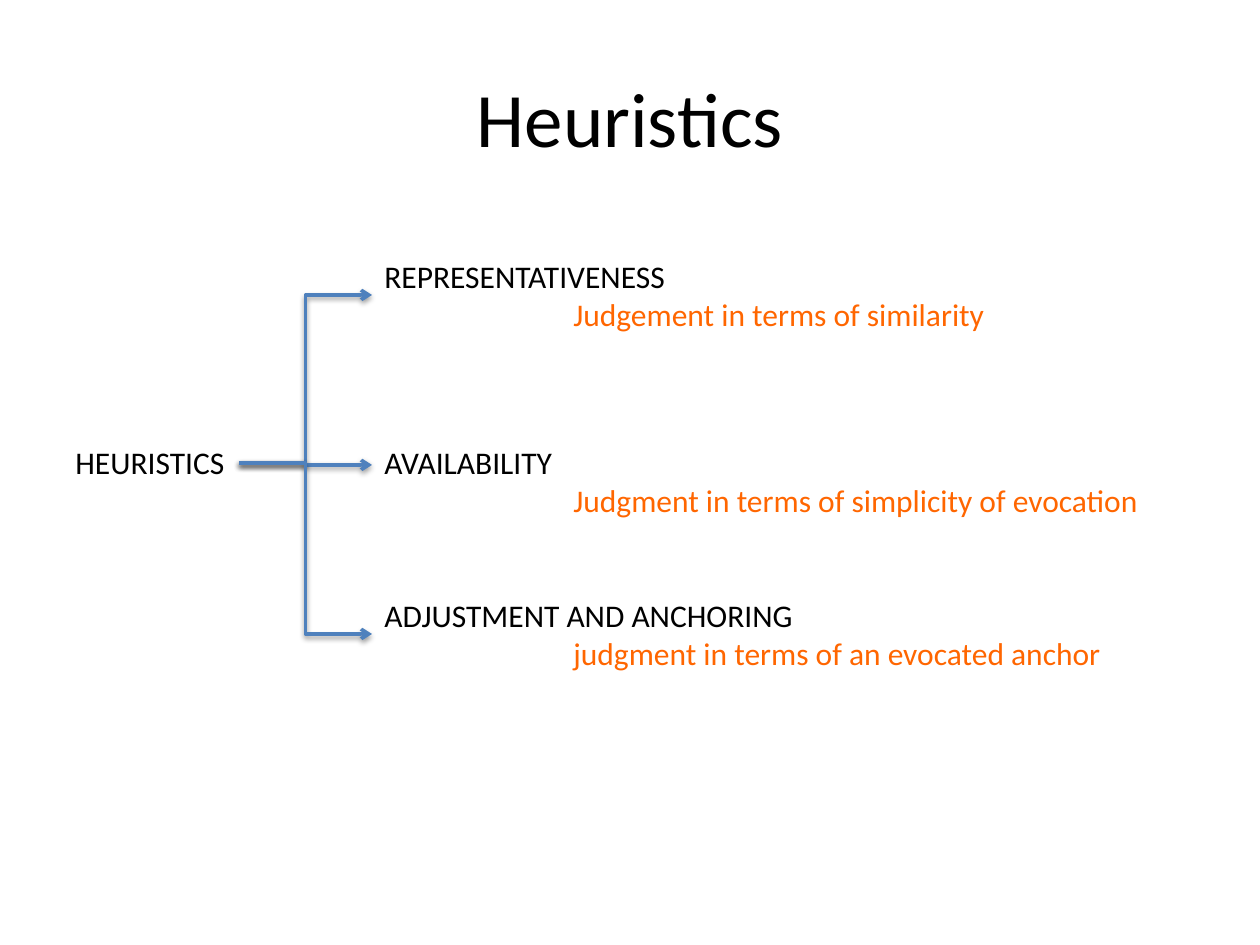
from lxml.etree import SubElement
from pptx import Presentation
from pptx.dml.color import RGBColor
from pptx.enum.shapes import MSO_CONNECTOR as Connector
from pptx.enum.text import MSO_ANCHOR as Anchor, MSO_AUTO_SIZE as AutoSize, PP_ALIGN as Align
from pptx.oxml.ns import qn
from pptx.util import Emu, Pt

BLACK = RGBColor(0x00, 0x00, 0x00)
ORANGE = RGBColor(0xFF, 0x66, 0x00)
BLUE = RGBColor(0x4F, 0x81, 0xBD)
BRANCHES = [
    ("REPRESENTATIVENESS", "Judgement in terms of similarity", 251, 633, 295),
    ("AVAILABILITY", "Judgment in terms of simplicity of evocation", 437, 788, 465),
    ("ADJUSTMENT AND ANCHORING", "judgment in terms of an evocated anchor", 590, 751, 634),
]


def px(length):
    return Emu(round(length * 914400 / 126))


def write(para, text, size=18, color=BLACK, font="Calibri", align=Align.LEFT, indent=0):
    para.alignment = align
    if indent:
        para.level = 3
        properties = para._p.get_or_add_pPr()
        properties.set("marL", str(px(indent)))
        properties.set("indent", "0")
    span = para.add_run()
    span.text = text
    span.font.size = Pt(size)
    span.font.name = font
    span.font.color.rgb = color


class Diagram:
    """Draws titles, labels and shadowed elbow arrows on one slide."""

    def __init__(self, page):
        self.page = page
        self.line_color = BLUE
        self.line_width = Pt(2)

    def frame(self, left, top, width, height):
        return self.page.shapes.add_textbox(*map(px, (left, top, width, height))).text_frame

    def title(self, text, left, top, width, height):
        frame = self.frame(left, top, width, height)
        frame.word_wrap = True
        frame.vertical_anchor = Anchor.MIDDLE
        write(frame.paragraphs[0], text, size=44, align=Align.CENTER)

    def label(self, text, left, top, width, height, detail=None):
        frame = self.frame(left, top, width, height)
        frame.word_wrap = False
        frame.auto_size = AutoSize.SHAPE_TO_FIT_TEXT
        write(frame.paragraphs[0], text)
        if detail:
            write(frame.add_paragraph(), detail, color=ORANGE, indent=189)

    def arrow(self, *ends):
        connector = self.page.shapes.add_connector(Connector.ELBOW, *map(px, ends))
        connector.line.color.rgb = self.line_color
        connector.line.width = self.line_width
        SubElement(connector.line._get_or_add_ln(), qn("a:tailEnd"), type="arrow")
        effects = SubElement(connector._element.spPr, qn("a:effectLst"))
        shadow = SubElement(effects, qn("a:outerShdw"), blurRad="40000", dist="20000",
                            dir="5400000", rotWithShape="0")
        tint = SubElement(shadow, qn("a:srgbClr"), val="000000")
        SubElement(tint, qn("a:alpha"), val="38000")


def main():
    deck = Presentation()
    deck.slide_width, deck.slide_height = px(1260), px(945)
    diagram = Diagram(deck.slides.add_slide(deck.slide_layouts[6]))
    diagram.title("Heuristics", 63, 38, 1134, 158)
    diagram.label("HEURISTICS", 63, 437, 176, 50)
    for name, meaning, top, width, arrow_y in BRANCHES:
        diagram.label(name, 372, top, width, 89, detail=meaning)
        diagram.arrow(239, 463, 372, arrow_y)
    deck.save("out.pptx")


if __name__ == "__main__":
    main()
